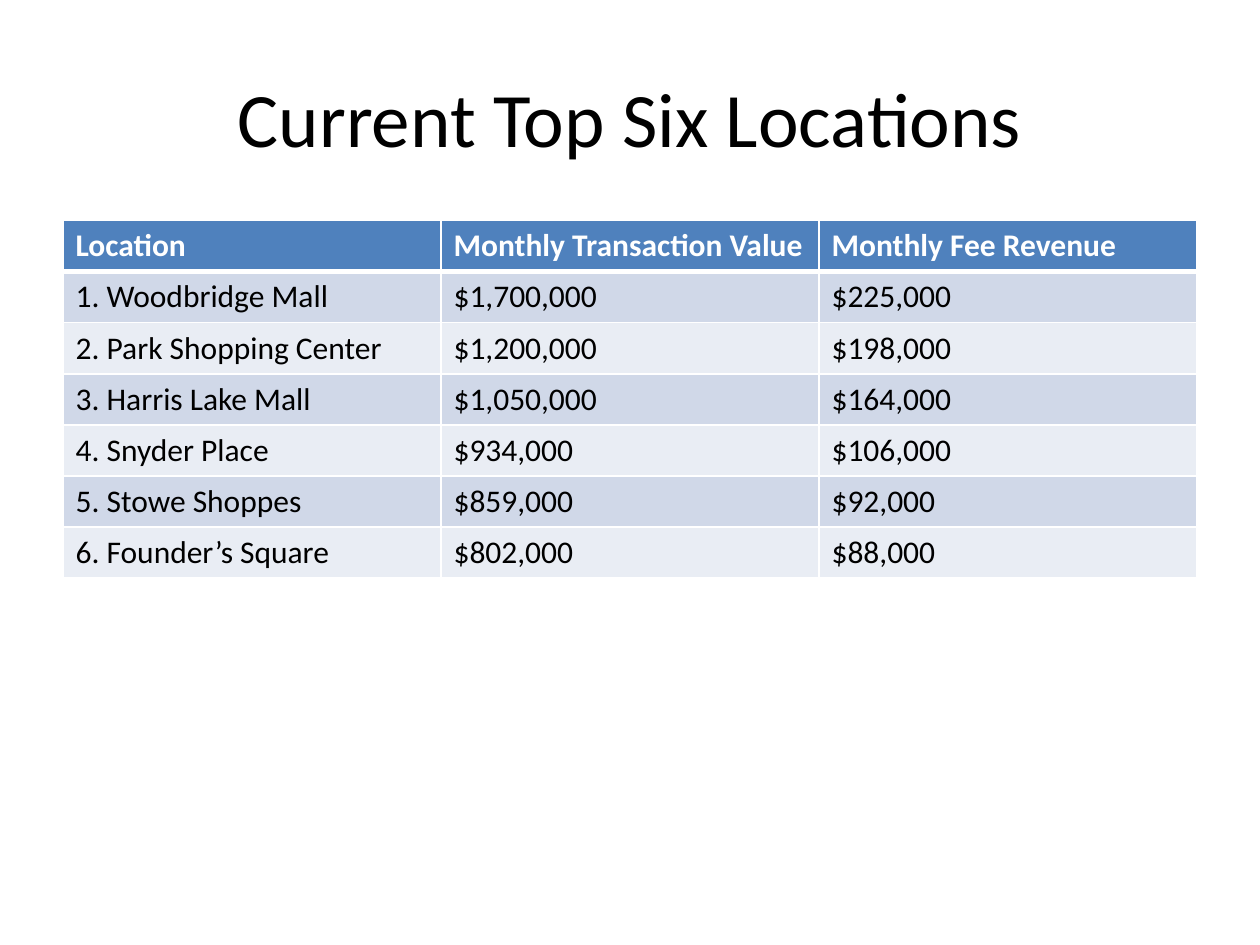
"""Build a slide with a table of the six leading locations."""
from lxml.etree import SubElement
from pptx import Presentation
from pptx.dml.color import RGBColor
from pptx.enum.text import MSO_ANCHOR, PP_ALIGN
from pptx.oxml.ns import qn
from pptx.util import Pt

COLORS = {"text": "000000", "white": "FFFFFF", "head": "4F81BD",
          "odd": "D0D8E8", "even": "E9EDF4"}
FONT = "Calibri"
ROWS = [
    ("Location", "Monthly Transaction Value", "Monthly Fee Revenue"),
    ("1. Woodbridge Mall", "$1,700,000", "$225,000"),
    ("2. Park Shopping Center", "$1,200,000", "$198,000"),
    ("3. Harris Lake Mall", "$1,050,000", "$164,000"),
    ("4. Snyder Place", "$934,000", "$106,000"),
    ("5. Stowe Shoppes", "$859,000", "$92,000"),
    ("6. Founder’s Square", "$802,000", "$88,000"),
]


class Deck:
    def __init__(self, slide):
        self.slide = slide

    def label(self, frame, text, size, color, bold=False):
        run = frame.paragraphs[0].add_run()
        run.text = text
        font = run.font
        font.name, font.size, font.bold = FONT, Pt(size), bold
        font.color.rgb = RGBColor.from_string(COLORS[color])

    def title(self, text, left, top, width, height):
        shape = self.slide.shapes.title
        shape.left, shape.top = Pt(left), Pt(top)
        shape.width, shape.height = Pt(width), Pt(height)
        frame = shape.text_frame
        frame.vertical_anchor = MSO_ANCHOR.MIDDLE
        frame.paragraphs[0].alignment = PP_ALIGN.CENTER
        self.label(frame, text, 44, "text")

    def border(self, cell, side, width):
        props = cell._tc.get_or_add_tcPr()
        line = SubElement(props, qn(f"a:ln{side}"), w=str(Pt(width)))
        fill = SubElement(line, qn("a:solidFill"))
        SubElement(fill, qn("a:srgbClr"), val=COLORS["white"])

    def cell(self, cell, row, text):
        head = row == 0
        widths = {"L": 1, "R": 1, "T": 3 if row == 1 else 1, "B": 3 if head else 1}
        for side, width in widths.items():
            self.border(cell, side, width)
        shade = "head" if head else "odd" if row % 2 else "even"
        cell.fill.solid()
        cell.fill.fore_color.rgb = RGBColor.from_string(COLORS[shade])
        self.label(cell.text_frame, text, 18, "white" if head else "text", head)

    def table(self, rows, left, top, width, height):
        frame = self.slide.shapes.add_table(
            len(rows), len(rows[0]), Pt(left), Pt(top), Pt(width), Pt(height))
        for row, texts in enumerate(rows):
            for col, text in enumerate(texts):
                self.cell(frame.table.cell(row, col), row, text)


def main():
    show = Presentation()
    show.slide_width, show.slide_height = Pt(720), Pt(540)
    deck = Deck(show.slides.add_slide(show.slide_layouts[5]))
    deck.title("Current Top Six Locations", 36, 21.6, 648, 90)
    deck.table(ROWS, 36, 126, 648, 204.4)
    show.save("out.pptx")


if __name__ == "__main__":
    main()
